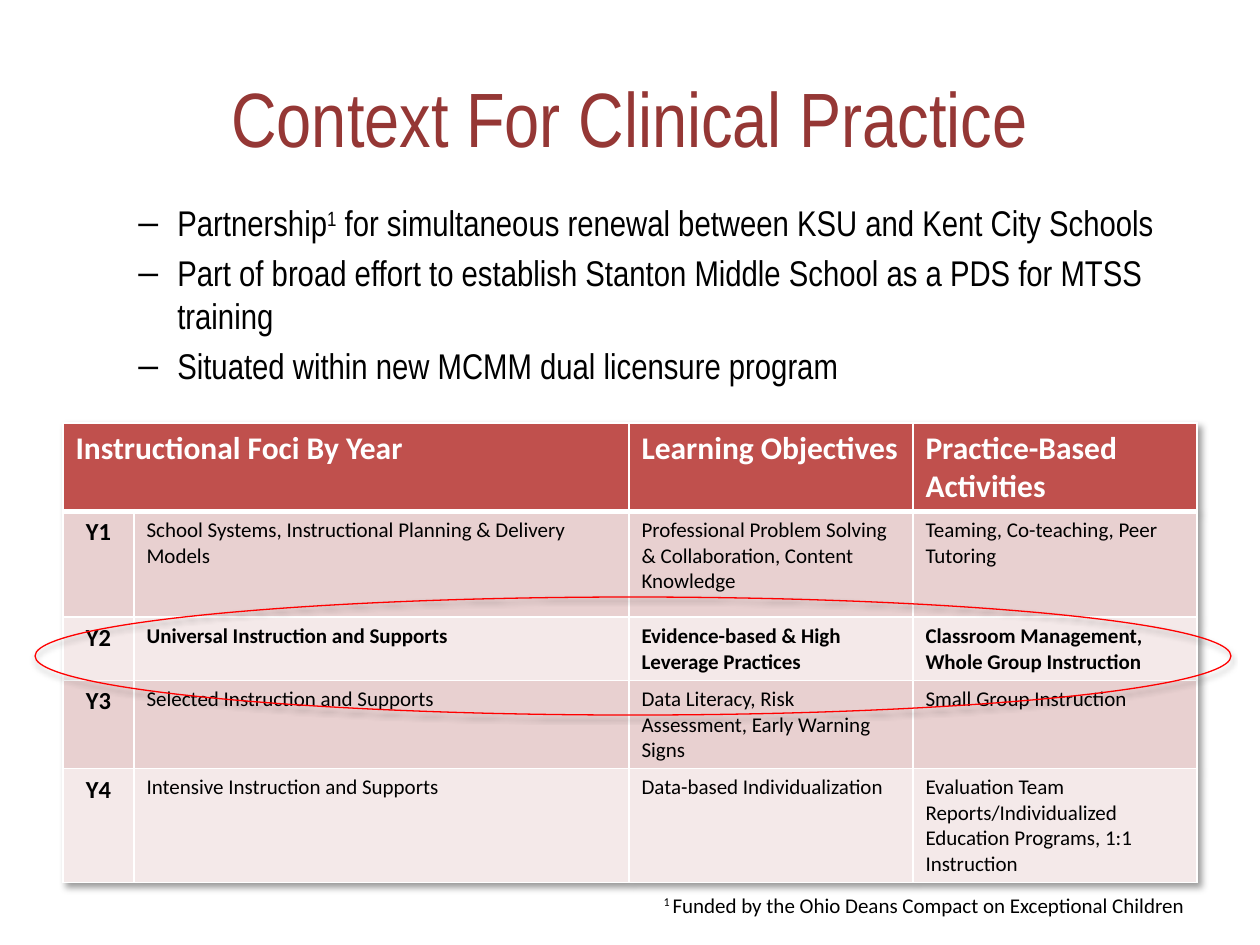
import pptx
import pptx.util
import pptx.oxml
import pptx.dml.color
import pptx.enum.text
import pptx.enum.shapes

Pt = pptx.util.Pt
ALIGN = pptx.enum.text.PP_ALIGN
NS = 'xmlns:a="http://schemas.openxmlformats.org/drawingml/2006/main"'
PX = 914400 // 126

# Content
TITLE = "Context For Clinical Practice"
POINTS = [
    [("Partnership", 0), ("1", 1),
     (" for simultaneous renewal between KSU and Kent City Schools", 0)],
    [("Part of broad effort to establish Stanton Middle School as a PDS for MTSS training", 0)],
    [("Situated within new MCMM dual licensure program", 0)],
]
NOTE = [("1 ", 1), ("Funded by the Ohio Deans Compact on Exceptional Children", 0)]
ROWS = [
    ["Instructional Foci By Year", "", "Learning Objectives", "Practice-Based Activities"],
    ["Y1", "School Systems, Instructional Planning & Delivery Models",
     "Professional Problem Solving & Collaboration, Content Knowledge",
     "Teaming, Co-teaching, Peer Tutoring"],
    ["Y2", "Universal Instruction and Supports",
     "Evidence-based & High Leverage Practices",
     "Classroom Management, Whole Group Instruction"],
    ["Y3", "Selected Instruction and Supports",
     "Data Literacy, Risk Assessment, Early Warning Signs", "Small Group Instruction"],
    ["Y4", "Intensive Instruction and Supports", "Data-based Individualization",
     "Evaluation Team Reports/Individualized Education Programs, 1:1 Instruction"],
]
FOCUS = 2  # the circled year
COLS = [71, 495, 284, 284]
HIGH = [88, 106, 63, 88, 114]
COLOR = {"title": "953735", "text": "000000", "white": "FFFFFF", "head": "C0504D",
         "odd": "E8D0D0", "even": "F4E9E9", "ring": "FF0000"}
LEFT, WIDE = 63, 1134


def rgb(name):
    return pptx.dml.color.RGBColor.from_string(COLOR[name])


def box(*px):
    return [n * PX for n in px]


def style(run, size, face, color, bold=False):
    font = run.font
    font.size, font.name, font.bold = Pt(size), face, bold
    font.color.rgb = rgb(color)


def write(para, parts, size, face, color):
    for text, sup in parts:
        run = para.add_run()
        run.text = text
        style(run, size, face, color)
        if sup:
            run.font._element.set("baseline", "30000")


def frame(top, high):
    text = slide.shapes.add_textbox(*box(LEFT, top, WIDE, high)).text_frame
    text.word_wrap = True
    return text


def shadow(blur, dist, angle, alpha):
    return pptx.oxml.parse_xml(
        f'<a:effectLst {NS}><a:outerShdw blurRad="{Pt(blur)}" dist="{Pt(dist)}" '
        f'dir="{angle * 60000}" rotWithShape="0"><a:srgbClr val="000000">'
        f'<a:alpha val="{alpha * 1000}"/></a:srgbClr></a:outerShdw></a:effectLst>')


def border(cell, row):
    props = cell._tc.get_or_add_tcPr()
    for side in "LRTB":
        wide = 3 if (row, side) in [(0, "B"), (1, "T")] else 1
        props.append(pptx.oxml.parse_xml(
            f'<a:ln{side} {NS} w="{Pt(wide)}"><a:solidFill>'
            f'<a:srgbClr val="{COLOR["white"]}"/></a:solidFill></a:ln{side}>'))


deck = pptx.Presentation()
deck.slide_width, deck.slide_height = pptx.util.Inches(10), pptx.util.Inches(7.5)
slide = deck.slides.add_slide(deck.slide_layouts[6])

# Footnote
para = frame(886, 38).paragraphs[0]
para.alignment = ALIGN.RIGHT
write(para, NOTE, 12, "Calibri", "text")

# Table
shape = slide.shapes.add_table(len(ROWS), len(COLS), *box(LEFT, 423, WIDE, sum(HIGH)))
table = shape.table
table._tbl.tblPr.insert(0, shadow(4, 3, 45, 40))
for col, wide in zip(table.columns, COLS):
    col.width = wide * PX
for row, high in zip(table.rows, HIGH):
    row.height = high * PX
table.cell(0, 0).merge(table.cell(0, 1))
for r, row in enumerate(ROWS):
    for c, text in enumerate(row):
        cell = table.cell(r, c)
        border(cell, r)
        cell.fill.solid()
        cell.fill.fore_color.rgb = rgb("head" if r == 0 else "odd" if r % 2 else "even")
        if not text:
            continue
        cell.text_frame.text = text
        para = cell.text_frame.paragraphs[0]
        year = r > 0 and c == 0
        if year:
            para.alignment = ALIGN.CENTER
        size = 18 if r == 0 else 14 if year else 12
        style(para.runs[0], size, "Calibri", "text" if r else "white",
              r in (0, FOCUS) or year)

# Ring around the focus year
ring = slide.shapes.add_shape(pptx.enum.shapes.MSO_SHAPE.OVAL, *box(35, 597, 1196, 118))
ring.fill.background()
ring.line.color.rgb = rgb("ring")
ring.line.width = Pt(0.75)
ring._element.spPr.append(shadow(3.1, 1.8, 90, 35))

# Bullet points
body = frame(195, 228)
for i, parts in enumerate(POINTS):
    para = body.add_paragraph() if i else body.paragraphs[0]
    para.level = 1
    para.space_before = Pt(4)
    write(para, parts, 20.4, "Arial Narrow", "text")
    props = para._p.get_or_add_pPr()
    props.set("marL", str(102 * PX))
    props.set("indent", str(-39 * PX))
    props.append(pptx.oxml.parse_xml(f'<a:buFont {NS} typeface="Arial"/>'))
    props.append(pptx.oxml.parse_xml(f'<a:buChar {NS} char="–"/>'))

# Title
head = frame(38, 157)
head.vertical_anchor = pptx.enum.text.MSO_ANCHOR.MIDDLE
head.text = TITLE
head.paragraphs[0].alignment = ALIGN.CENTER
style(head.paragraphs[0].runs[0], 44, "Arial Narrow", "title")

deck.save("out.pptx")
